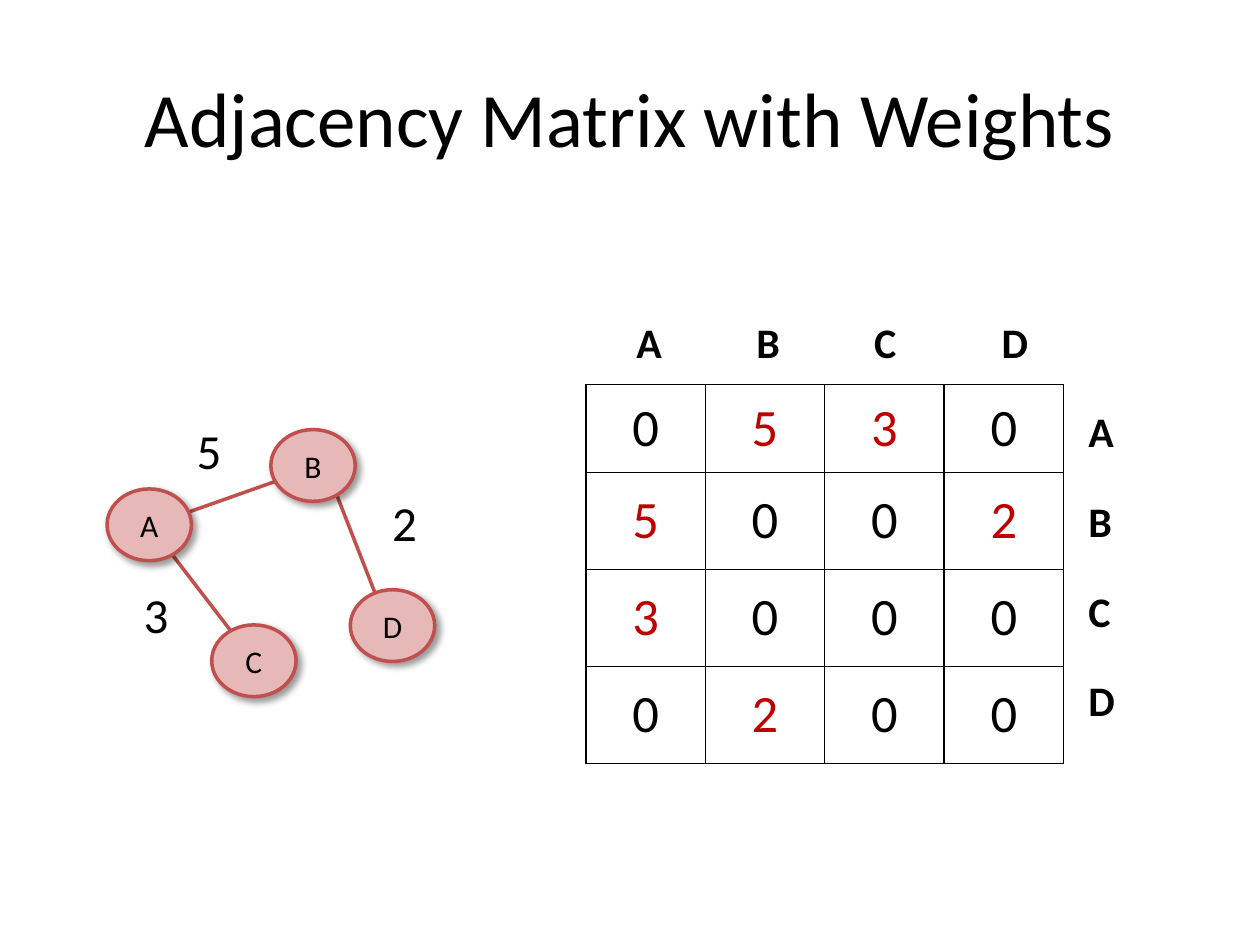
"""Build a slide showing a weighted graph beside its adjacency matrix."""
from lxml import etree
from pptx import Presentation
from pptx import util as u
from pptx.dml.color import RGBColor
from pptx.enum import shapes, text
from pptx.oxml import parse_xml
from pptx.oxml.ns import nsdecls, qn

COLORS = {"ink": "000000", "weight": "C00000", "paper": "FFFFFF",
          "node": "E6B9B8", "edge": "C0504D"}
VERTICES = "ABCD"
WEIGHTS = [[0, 5, 3, 0], [5, 0, 0, 2], [3, 0, 0, 0], [0, 2, 0, 0]]
NODES = {"B": (154.8, 245.5), "D": (200.2, 337), "A": (61.2, 279.4), "C": (121, 357.1)}
EDGES = [(85, 299.5, 133.2, 362.2), (96.5, 296.6, 192.2, 262.8), (220.3, 354.2, 192.2, 282.2)]
EDGE_WEIGHTS = [("3", 59, 330.5), ("5", 89.3, 236.9), ("2", 200.9, 277.9)]
HEADER_STOPS = [29, 97, 164, 238]


def points(*lengths):
    """Convert numbers to lengths in points."""
    return [u.Pt(length) for length in lengths]


def rgb(name):
    """Look up a palette colour."""
    return RGBColor.from_string(COLORS[name])


def write(frame, content, size, color="ink", bold=False, align="LEFT", anchor="TOP", after=0):
    """Fill a text frame with one paragraph per line of content."""
    frame.word_wrap = True
    frame.vertical_anchor = text.MSO_ANCHOR[anchor]
    for number, line in enumerate(content.split("\n")):
        paragraph = frame.add_paragraph() if number else frame.paragraphs[0]
        paragraph.alignment = text.PP_ALIGN[align]
        paragraph.space_after = u.Pt(after)
        run = paragraph.add_run()
        run.text = line
        run.font.name, run.font.size, run.font.bold = "Calibri", u.Pt(size), bold
        run.font.color.rgb = rgb(color)


def add_label(slide, content, box, **style):
    """Place a text box and return its frame."""
    frame = slide.shapes.add_textbox(*points(*box)).text_frame
    write(frame, content, **style)
    return frame


def add_edge(slide, ends):
    """Draw a graph edge."""
    edge = slide.shapes.add_connector(shapes.MSO_CONNECTOR.STRAIGHT, *points(*ends))
    edge.line.color.rgb, edge.line.width = rgb("edge"), u.Pt(2)
    etree.SubElement(edge._element.spPr, qn("a:effectLst"))


def add_node(slide, name, corner):
    """Draw a graph vertex with a soft shadow."""
    node = slide.shapes.add_shape(shapes.MSO_SHAPE.OVAL, *points(*corner, 48.2, 41))
    node.fill.solid()
    node.fill.fore_color.rgb = rgb("node")
    node.line.color.rgb, node.line.width = rgb("edge"), u.Pt(2)
    node.shadow.inherit = False
    node._element.spPr.find(qn("a:effectLst")).append(parse_xml(
        f'<a:outerShdw {nsdecls("a")} blurRad="{u.Pt(4)}" dist="{u.Pt(3)}" dir="2700000"'
        f' algn="tl" rotWithShape="0"><a:srgbClr val="{COLORS["ink"]}">'
        '<a:alpha val="40000"/></a:srgbClr></a:outerShdw>'))
    write(node.text_frame, name, size=18, align="CENTER", anchor="MIDDLE")


def style_cell(cell, weight):
    """Write one matrix entry with its borders and fill."""
    properties = cell._tc.get_or_add_tcPr()
    for side in "LRTB":
        properties.append(parse_xml(
            f'<a:ln{side} {nsdecls("a")} w="{u.Pt(1)}"><a:solidFill>'
            f'<a:srgbClr val="{COLORS["ink"]}"/></a:solidFill></a:ln{side}>'))
    cell.fill.solid()
    cell.fill.fore_color.rgb = rgb("paper")
    write(cell.text_frame, str(weight), size=30, align="CENTER",
          color="weight" if weight else "ink")
    cell.vertical_anchor = text.MSO_ANCHOR.MIDDLE


def add_matrix(slide):
    """Add the adjacency matrix."""
    count = len(VERTICES)
    box = points(334.8, 219.6, 273, 216.7)
    matrix = slide.shapes.add_table(count, count, *box).table
    matrix.first_row = matrix.horz_banding = False
    for index, weights in enumerate(WEIGHTS):
        matrix.columns[index].width = u.Pt(68.25)
        matrix.rows[index].height = u.Pt(55.44 if index else 50.4)
        for column, weight in enumerate(weights):
            style_cell(matrix.cell(index, column), weight)


def add_column_names(slide):
    """Name the matrix columns on centred tab stops."""
    frame = add_label(slide, "".join("\t" + name for name in VERTICES),
                      (334.8, 177.1, 293.8, 36), size=24, bold=True)
    stops = etree.SubElement(frame.paragraphs[0]._p.get_or_add_pPr(), qn("a:tabLst"))
    for stop in HEADER_STOPS:
        etree.SubElement(stops, qn("a:tab"), pos=str(u.Pt(stop)), algn="ctr")


def main():
    """Assemble and save the slide."""
    deck = Presentation()
    deck.slide_width, deck.slide_height = points(720, 540)
    slide = deck.slides.add_slide(deck.slide_layouts[6])
    add_label(slide, "Adjacency Matrix with Weights", (36, 21.6, 648, 90),
              size=44, align="CENTER", anchor="MIDDLE")
    add_matrix(slide)
    add_column_names(slide)
    for ends in EDGES:
        add_edge(slide, ends)
    for name, corner in NODES.items():
        add_node(slide, name, corner)
    add_label(slide, "\n".join(VERTICES), (614.9, 228.2, 38.9, 193),
              size=24, bold=True, after=22.5)
    for weight, left, top in EDGE_WEIGHTS:
        add_label(slide, weight, (left, top, 60.5, 41), size=28, align="CENTER")
    deck.save("out.pptx")


if __name__ == "__main__":
    main()
